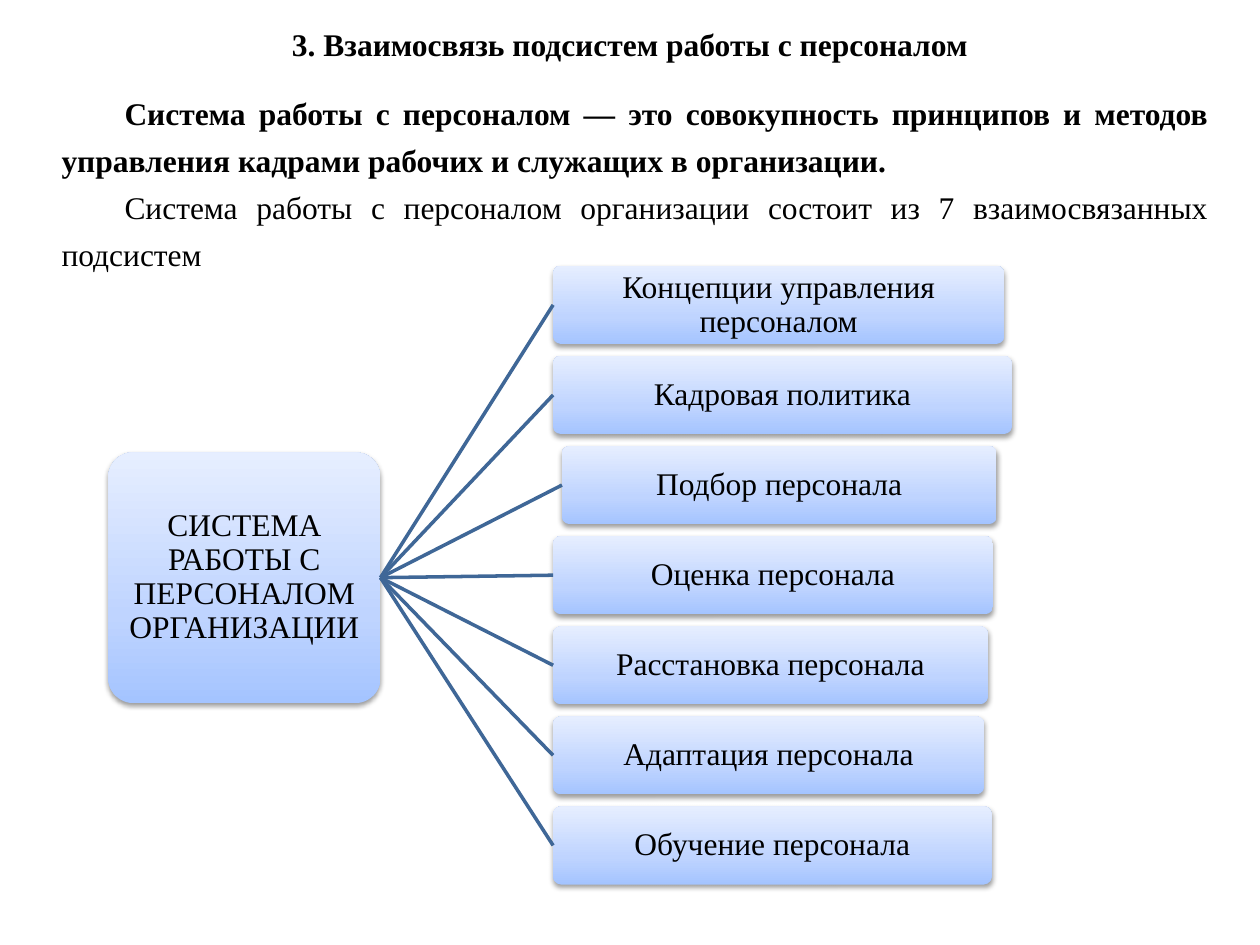
from copy import deepcopy
from dataclasses import dataclass

from lxml import etree
from pptx import Presentation
from pptx.dml.color import RGBColor
from pptx.enum.shapes import MSO_CONNECTOR, MSO_SHAPE
from pptx.enum.text import MSO_ANCHOR, MSO_AUTO_SIZE, PP_ALIGN
from pptx.oxml.ns import qn
from pptx.util import Inches, Pt

CENTER, JUSTIFY = PP_ALIGN.CENTER, PP_ALIGN.JUSTIFY
TOP, MIDDLE = MSO_ANCHOR.TOP, MSO_ANCHOR.MIDDLE
LEFT_SIDE, RIGHT_SIDE = 1, 3

# Content
TITLE = "3. Взаимосвязь подсистем работы с персоналом"
DEFINITION = [
    ("Система работы с персоналом — это совокупность принципов и методов "
     "управления кадрами рабочих и служащих в организации.", True),
    ("Система работы с персоналом организации состоит из 7 взаимосвязанных "
     "подсистем", False),
]
ROOT = "СИСТЕМА РАБОТЫ С ПЕРСОНАЛОМ ОРГАНИЗАЦИИ"
SUBSYSTEMS = [  # text, left, width
    ("Концепции управления персоналом", 4.39, 3.58),
    ("Кадровая политика", 4.39, 3.64),
    ("Подбор персонала", 4.46, 3.45),
    ("Оценка персонала", 4.39, 3.49),
    ("Расстановка персонала", 4.39, 3.45),
    ("Адаптация персонала", 4.39, 3.42),
    ("Обучение персонала", 4.39, 3.48),
]

# Layout in inches
SLIDE_SIZE = (10, 7.5)
TITLE_AREA = (0, 0, 10, 0.56)
DEFINITION_AREA = (0.39, 0.62, 9.3, 1.58)
ROOT_AREA = (0.86, 3.59, 2.16, 1.99)
FIRST_TOP, ROW_STEP, ROW_HEIGHT = 2.11, 0.715, 0.62


@dataclass(frozen=True)
class Theme:
    font: str = "Times New Roman"
    size: float = 18
    text: str = "000000"
    line: str = "3F6797"
    line_width: float = 2
    gradient: tuple = ((0, "A4C4FF"), (0.35, "BFD4FF"), (1, "E6EEFF"))
    corner: float = 0.1


THEME = Theme()


def write(frame, text, *, bold=False, align=CENTER, spacing=0.9, indent=0, add=False):
    para = frame.add_paragraph() if add else frame.paragraphs[0]
    para.alignment, para.line_spacing = align, spacing
    para.space_before = para.space_after = Pt(0)
    if indent:
        para._p.get_or_add_pPr().set("indent", str(Inches(indent)))
    span = para.add_run()
    span.text = text
    span.font.name, span.font.size, span.font.bold = THEME.font, Pt(THEME.size), bold
    span.font.color.rgb = RGBColor.from_string(THEME.text)


def add_shadow(shape):
    shape.shadow.inherit = False
    effects = shape._element.spPr.find(qn("a:effectLst"))
    shadow = etree.SubElement(
        effects, qn("a:outerShdw"), blurRad=str(Pt(3.1)), dist=str(Pt(1.6)),
        dir="5400000", rotWithShape="0")
    color = etree.SubElement(shadow, qn("a:srgbClr"), val="000000")
    etree.SubElement(color, qn("a:alpha"), val="38000")


def fill_gradient(shape):
    shape.fill.gradient()
    shape.fill.gradient_angle = 90
    stops = shape._element.spPr.find(qn("a:gradFill")).find(qn("a:gsLst"))
    stops.append(deepcopy(stops[0]))
    for stop, (position, color) in zip(shape.fill.gradient_stops, THEME.gradient):
        stop.position = position
        stop.color.rgb = RGBColor.from_string(color)


def add_node(page, text, area, inset):
    box = page.shapes.add_shape(MSO_SHAPE.ROUNDED_RECTANGLE, *map(Inches, area))
    box.adjustments[0] = THEME.corner
    fill_gradient(box)
    box.line.fill.background()
    add_shadow(box)
    frame = box.text_frame
    frame.word_wrap, frame.vertical_anchor = True, MIDDLE
    frame.margin_left = frame.margin_right = Inches(inset)
    frame.margin_top = frame.margin_bottom = Inches(inset)
    write(frame, text)
    return box


def add_link(page, start, end):
    link = page.shapes.add_connector(MSO_CONNECTOR.STRAIGHT, 0, 0, 0, 0)
    link.begin_connect(start, RIGHT_SIDE)
    link.end_connect(end, LEFT_SIDE)
    link.line.color.rgb = RGBColor.from_string(THEME.line)
    link.line.width = Pt(THEME.line_width)
    etree.SubElement(link._element.spPr, qn("a:effectLst"))


def main():
    deck = Presentation()
    deck.slide_width, deck.slide_height = map(Inches, SLIDE_SIZE)
    page = deck.slides.add_slide(deck.slide_layouts.get_by_name("Title Only"))

    # Title
    title = page.shapes.title
    title.left, title.top, title.width, title.height = map(Inches, TITLE_AREA)
    title.text_frame.vertical_anchor = TOP
    title.text_frame.auto_size = MSO_AUTO_SIZE.NONE
    write(title.text_frame, TITLE, bold=True, spacing=1.5)

    # Definition
    box = page.shapes.add_textbox(*map(Inches, DEFINITION_AREA))
    box.text_frame.word_wrap = True
    for index, (text, bold) in enumerate(DEFINITION):
        write(box.text_frame, text, bold=bold, align=JUSTIFY, spacing=1.25,
              indent=0.5, add=index > 0)

    # Tree of subsystems
    root = add_node(page, ROOT, ROOT_AREA, inset=0.07)
    for row, (text, left, width) in enumerate(SUBSYSTEMS):
        area = (left, FIRST_TOP + row * ROW_STEP, width, ROW_HEIGHT)
        add_link(page, root, add_node(page, text, area, inset=0.03))

    deck.save("out.pptx")


if __name__ == "__main__":
    main()
